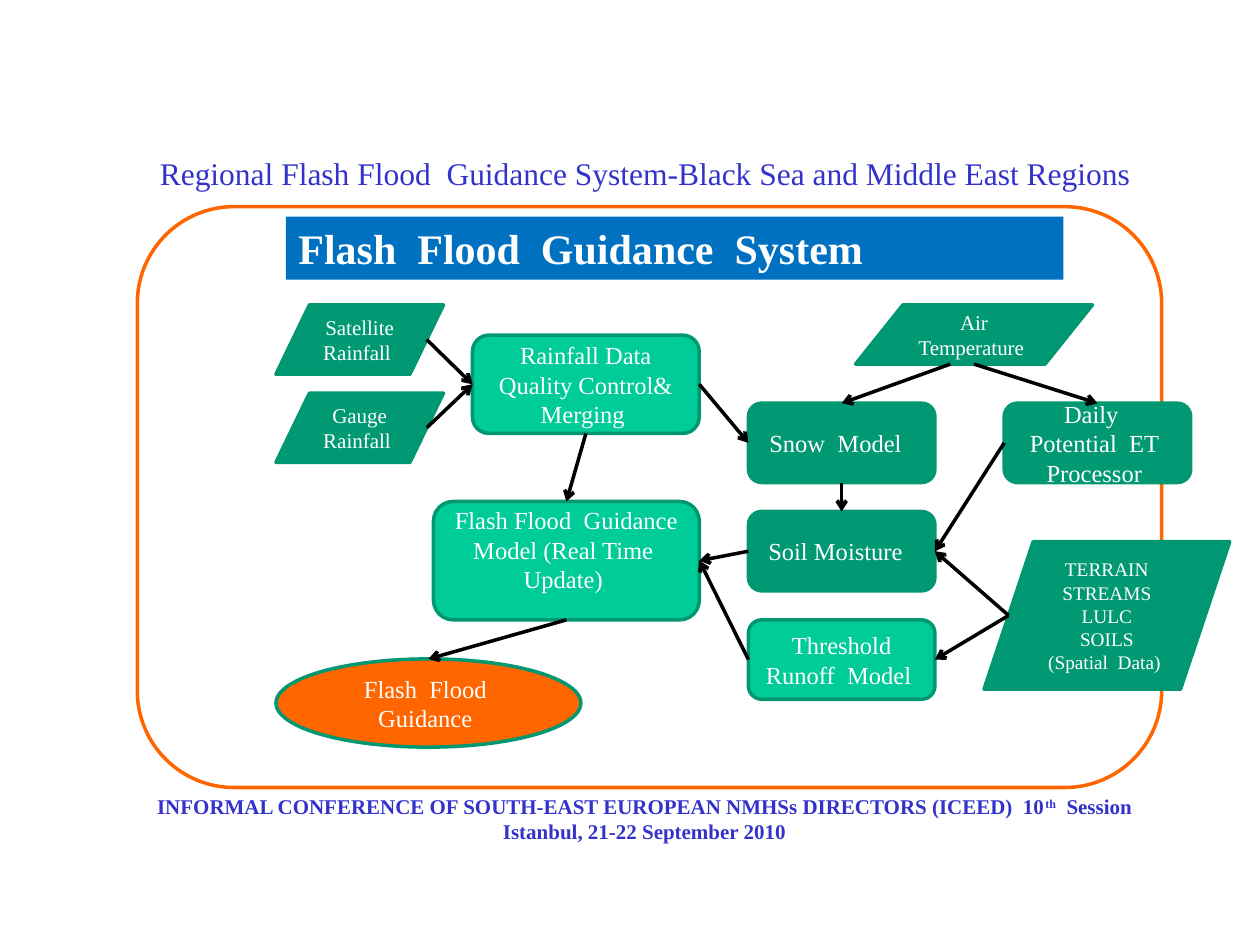
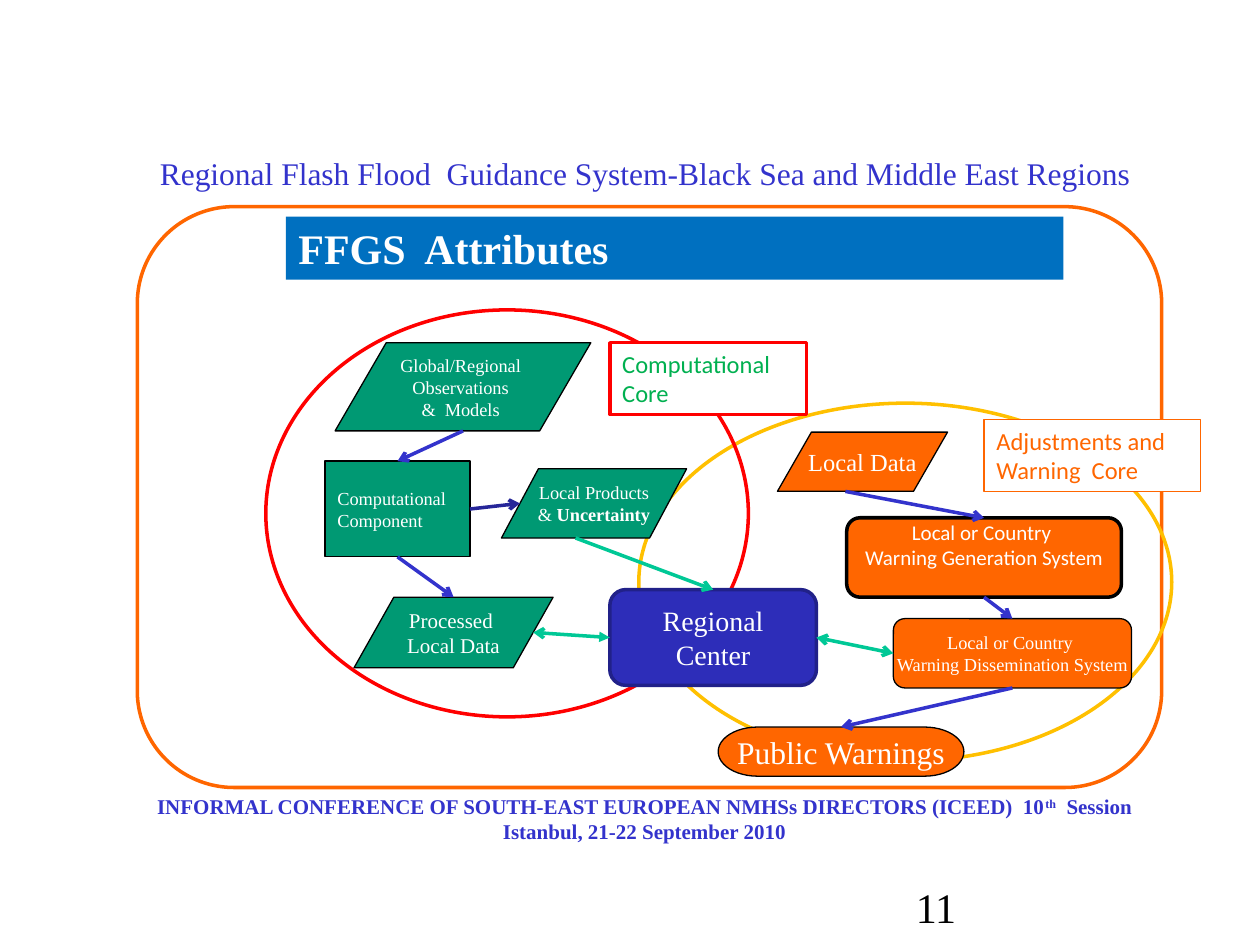
from lxml.etree import SubElement
from pptx import Presentation
from pptx.dml.color import RGBColor
from pptx.enum.shapes import MSO_CONNECTOR, MSO_SHAPE as Shape
from pptx.enum.text import MSO_ANCHOR as Anchor, PP_ALIGN as Align
from pptx.oxml.ns import qn
from pptx.util import Inches, Pt

SERIF, SANS = "Times New Roman", "Calibri"
WHITE, BLACK, BLUE, ORANGE = "FFFFFF", "000000", "3333CC", "FF6600"
GREEN, MINT, EDGE, TEAL = "009973", "00CC99", "009771", "00C896"
SLANTED, ROUNDED = Shape.FLOWCHART_DATA, Shape.FLOWCHART_ALTERNATE_PROCESS
hex_color = RGBColor.from_string

deck = Presentation()
deck.slide_width, deck.slide_height = Inches(10), Inches(7.5)
COLUMN, ROW = deck.slide_width / 100, deck.slide_height / 75


def add_box(page, kind, place, paras=(), fill=None, line=None, weight=2, size=14,
            ink=WHITE, font=SERIF, align=Align.CENTER, anchor=Anchor.MIDDLE,
            wrap=True, bold=False, foot=0.5):
    left, top, width, height = place
    area = [round(n) for n in (left * COLUMN, top * ROW, width * COLUMN, height * ROW)]
    if kind is None:
        box = page.shapes.add_textbox(*area)
    else:
        box = page.shapes.add_shape(kind, *area)
        box.shadow.inherit = False
        if fill:
            box.fill.solid()
            box.fill.fore_color.rgb = hex_color(fill)
        else:
            box.fill.background()
        if line:
            box.line.color.rgb = hex_color(line)
            box.line.width = Pt(weight)
        else:
            box.line.fill.background()
    frame = box.text_frame
    frame.word_wrap = wrap
    frame.vertical_anchor = anchor
    frame.margin_bottom = round(foot * ROW)
    for number, runs in enumerate(paras):
        para = frame.add_paragraph() if number else frame.paragraphs[0]
        para.alignment = align
        for text, mark in [(runs, "")] if isinstance(runs, str) else runs:
            span = para.add_run()
            span.text = text
            span.font.name, span.font.size = font, Pt(size)
            span.font.color.rgb = hex_color(ink)
            span.font.bold = bold or mark == "bold"
            if mark == "super":
                span.font._element.set("baseline", "30000")
    return box


SIDES = {"top": (0.5, 0, 0), "left": (0, 0.5, 1), "bottom": (0.5, 1, 2), "right": (1, 0.5, 3)}
SLANTED_SIDES = {"top": (0.5, 0), "left": (0.1, 0.5), "bottom": (0.5, 1),
                 "right": (0.9, 0.5), "base": (0.4, 1)}

rain = dict(fill=GREEN, line=EDGE, size=12)
dark = dict(fill=GREEN, line=EDGE)
light = dict(fill=MINT, line=EDGE)
models = [(59.4, 32 + 8.6 * step, 14.8, 6.3) for step in range(3)]
gauges = [(21.9, 24.2 + 7 * step, 13.3, 5.5) for step in range(2)]

system_boxes = {
    "satellite": (SLANTED, gauges[0], ["Satellite Rainfall "], rain),
    "gauge": (SLANTED, gauges[1], ["Gauge Rainfall "], rain),
    "merging": (ROUNDED, (37.5, 26.6, 18, 7.8), ["Rainfall Data Quality Control& Merging "], light),
    "guidance model": (ROUNDED, (34.4, 39.8, 21.1, 9.4),
                       ["Flash Flood  Guidance Model (Real Time  Update) "], dict(light, foot=2.3)),
    "snow": (ROUNDED, models[0], ["Snow  Model  "], dark),
    "soil": (ROUNDED, models[1], ["Soil Moisture  "], dark),
    "threshold": (ROUNDED, models[2], ["Threshold Runoff  Model "], light),
    "air": (SLANTED, (67.9, 24.2, 18.8, 4.7), ["Air Temperature "], rain),
    "daily": (ROUNDED, (79.7, 32, 14.8, 6.3), ["Daily   Potential  ET  Processor "], dark),
    "terrain": (SLANTED, (78.1, 43, 19.5, 11.7),
                ["TERRAIN", "STREAMS LULC", "SOILS", "(Spatial  Data) "], dict(dark, size=11)),
    "guidance": (Shape.OVAL, (21.9, 52.3, 24.2, 7), ["Flash  Flood  Guidance "],
                 dict(fill=ORANGE, line=EDGE)),
}
system_links = [(*ends, BLACK, None) for ends in [
    ("merging", "bottom", "guidance model", "top"),
    ("merging", "right", "snow", "left"),
    ("air", "base", "snow", "top"),
    ("air", "bottom", "daily", "top"),
    ("terrain", "left", "soil", "right"),
    ("terrain", "left", "threshold", "right"),
    ("daily", "left", "soil", "right"),
    ("snow", "bottom", "soil", "top"),
    ("soil", "left", "guidance model", "right"),
    ("threshold", "left", "guidance model", "right"),
    ("guidance model", "bottom", "guidance", "top"),
    ("satellite", "right", "merging", "left"),
    ("gauge", "right", "merging", "left"),
]]

core = dict(fill=GREEN, line=BLACK, weight=0.75, size=10.5, wrap=False)
warning = dict(core, fill=ORANGE)
label = dict(fill=WHITE, font=SANS, align=Align.LEFT, anchor=Anchor.TOP)

attribute_boxes = {
    "component": (Shape.RECTANGLE, (25.8, 36.6, 11.5, 7.6), ["Computational", "Component"],
                  dict(core, align=Align.LEFT)),
    "observations": (SLANTED, (26.6, 27.2, 20.3, 7),
                     ["Global/Regional ", "Observations ", "&  Models "], core),
    "warning circle": (Shape.OVAL, (50.7, 32, 42.3, 28.4), [], dict(line="FFC000")),
    "products": (SLANTED, (39.8, 37.2, 14.7, 5.5),
                 ["Local Products", [("& ", ""), ("Uncertainty", "bold")]], core),
    "generation": (ROUNDED, (67.2, 41.1, 21.8, 6.3),
                   ["Local or Country ", "Warning Generation System"],
                   dict(warning, weight=2, size=12, font=SANS, foot=2.5)),
    "local": (SLANTED, (61.7, 34.3, 13.5, 4.7), ["Local Data"], dict(warning, size=14)),
    "dissemination": (ROUNDED, (70.9, 49.1, 18.9, 5.5),
                      ["Local or Country ", "Warning Dissemination System"], warning),
    "public": (Shape.FLOWCHART_TERMINATOR, (57, 57.7, 19.5, 3.9), ["Public Warnings"],
               dict(warning, size=18)),
    "core circle": (Shape.OVAL, (21.1, 24.6, 38.3, 32.3), [], dict(line="FF0000")),
    "center": (Shape.ROUNDED_RECTANGLE, (48.4, 46.8, 16.4, 7.6), ["Regional Center"],
               dict(fill="2D2DB9", line="212189", size=16)),
    "processed": (SLANTED, (28.1, 47.4, 15.8, 5.6), ["Processed ", "Local Data"],
                  dict(core, size=12)),
    "warning label": (Shape.RECTANGLE, (78.1, 33.3, 17.2, 5.7), ["Adjustments and Warning  Core"],
                      dict(label, line=ORANGE, ink=ORANGE, weight=0.75)),
    "core label": (Shape.RECTANGLE, (48.4, 27.2, 15.6, 5.7), ["Computational", "Core"],
                   dict(label, line="FF0000", ink="00B050")),
}
attribute_links = [
    ("observations", "bottom", "component", "top", BLUE, None),
    ("component", "bottom", "processed", "top", BLUE, None),
    ("products", "bottom", "center", "top", TEAL, None),
    ("center", "right", "dissemination", "left", TEAL, "arrow"),
    ("component", "right", "products", "left", "262699", None),
    ("center", "left", "processed", "right", TEAL, "triangle"),
    ("local", "bottom", "generation", "top", BLUE, None),
    ("generation", "bottom", "dissemination", "top", BLUE, None),
    ("dissemination", "bottom", "public", "top", BLUE, None),
]
attribute_links[2] = ("products", "base", *attribute_links[2][2:])
attribute_links[6] = ("local", "base", *attribute_links[6][2:])

slides = [
    ("Flash  Flood  Guidance  System", 48.9, None, system_boxes, system_links),
    ("FFGS  Attributes", 29.4, "11", attribute_boxes, attribute_links),
]
session = [("INFORMAL CONFERENCE OF SOUTH-EAST EUROPEAN NMHSs DIRECTORS (ICEED)  10", ""),
           ("th", "super"), ("  Session", "")]
plain = dict(align=Align.LEFT, anchor=Anchor.TOP)

for title, title_width, page_number, boxes, links in slides:
    page = deck.slides.add_slide(deck.slide_layouts[6])
    add_box(page, Shape.ROUNDED_RECTANGLE, (10.9, 16.4, 81.3, 46.1), fill=WHITE, line=ORANGE)
    add_box(page, None, (11.7, 11.7, 80.5, 4),
            ["Regional Flash Flood  Guidance System-Black Sea and Middle East Regions"],
            size=18, ink=BLUE, **plain)
    add_box(page, None, (10.9, 62.5, 80.5, 5), [session, "Istanbul, 21-22 September 2010"],
            size=12, ink=BLUE, bold=True)
    add_box(page, Shape.RECTANGLE, (22.7, 17.2, 61.7, 5), fill="0070C0")
    add_box(page, None, (22.7, 17.2, title_width, 5), [title], size=24, bold=True, **plain)
    if page_number:
        add_box(page, None, (71.7, 69.5, 23.3, 4), [page_number], size=24, ink=BLACK, **plain)

    drawn = {name: add_box(page, kind, place, paras, **style)
             for name, (kind, place, paras, style) in boxes.items()}

    for source, source_side, target, target_side, color, head in links:
        points = []
        for name, side in ((source, source_side), (target, target_side)):
            box = drawn[name]
            ports = SLANTED_SIDES if boxes[name][0] == SLANTED else SIDES
            across, down = ports[side][:2]
            points += [round(box.left + across * box.width), round(box.top + down * box.height)]
        arrow = page.shapes.add_connector(MSO_CONNECTOR.STRAIGHT, *points)
        if boxes[source][0] != SLANTED:
            arrow.begin_connect(drawn[source], SIDES[source_side][2])
        if boxes[target][0] != SLANTED:
            arrow.end_connect(drawn[target], SIDES[target_side][2])
        arrow.line.color.rgb = hex_color(color)
        arrow.line.width = Pt(2)
        stroke = arrow.line._get_or_add_ln()
        if head:
            SubElement(stroke, qn("a:headEnd"), type=head)
        SubElement(stroke, qn("a:tailEnd"), type="arrow")
        SubElement(arrow._element.spPr, qn("a:effectLst"))

deck.save("out.pptx")
